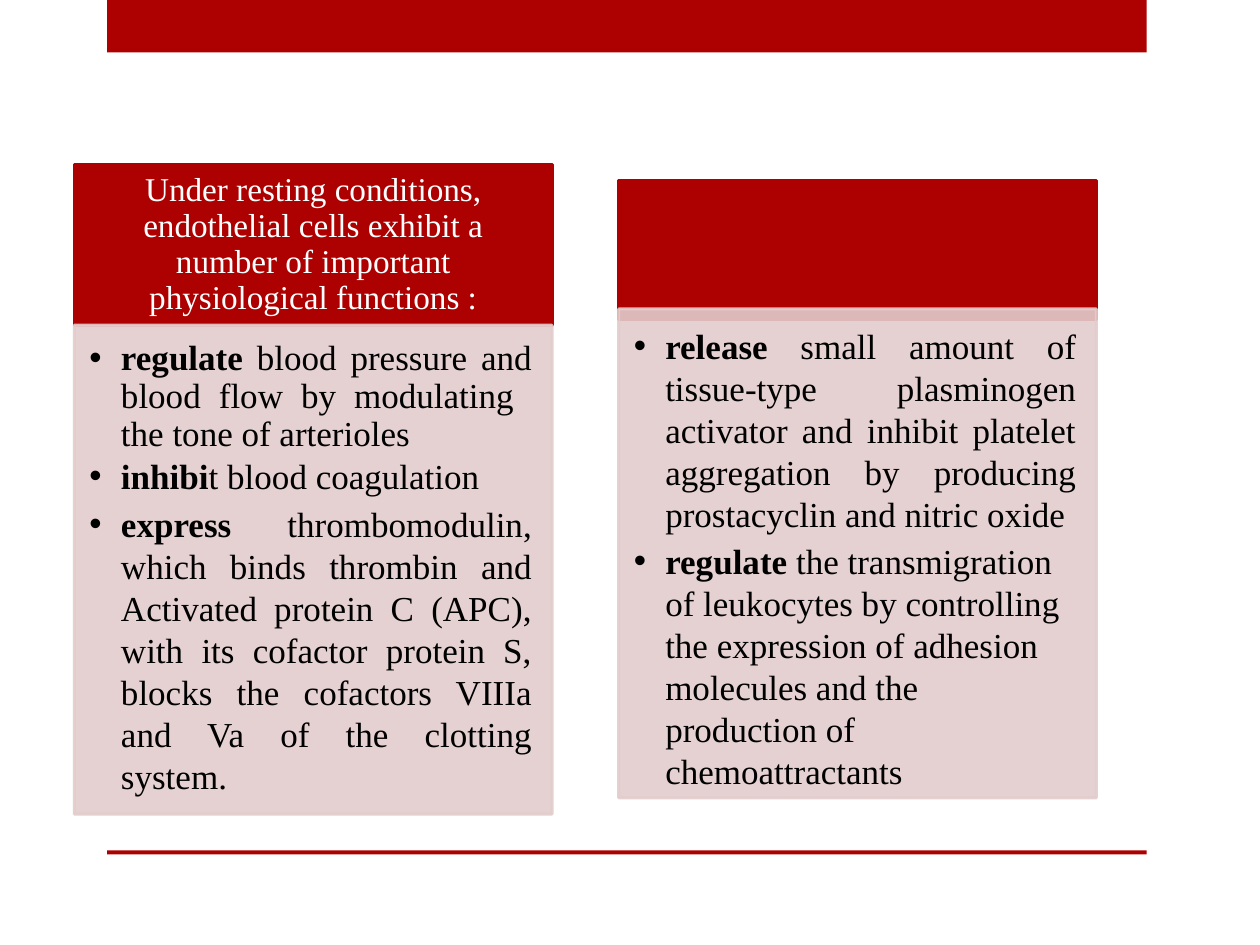
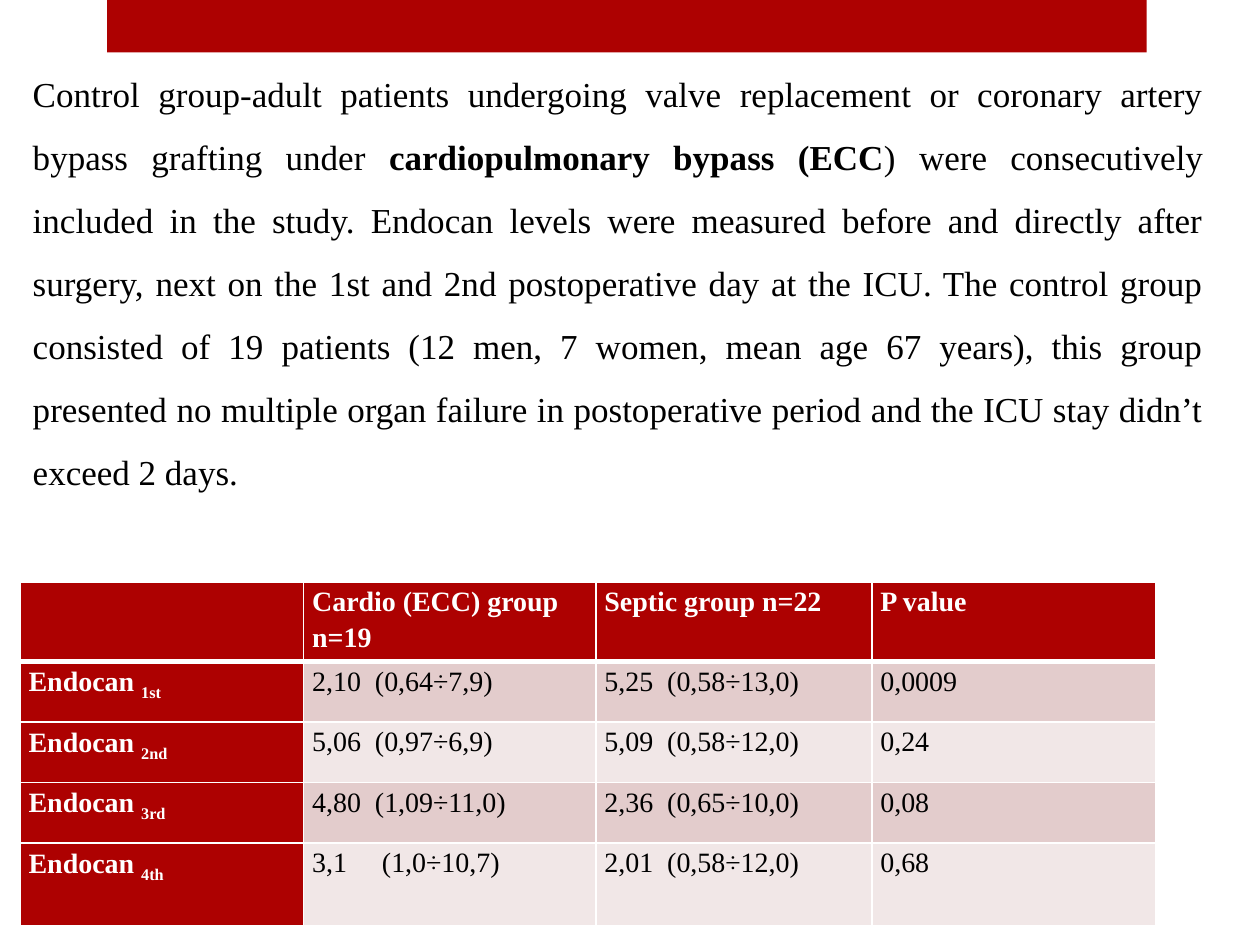
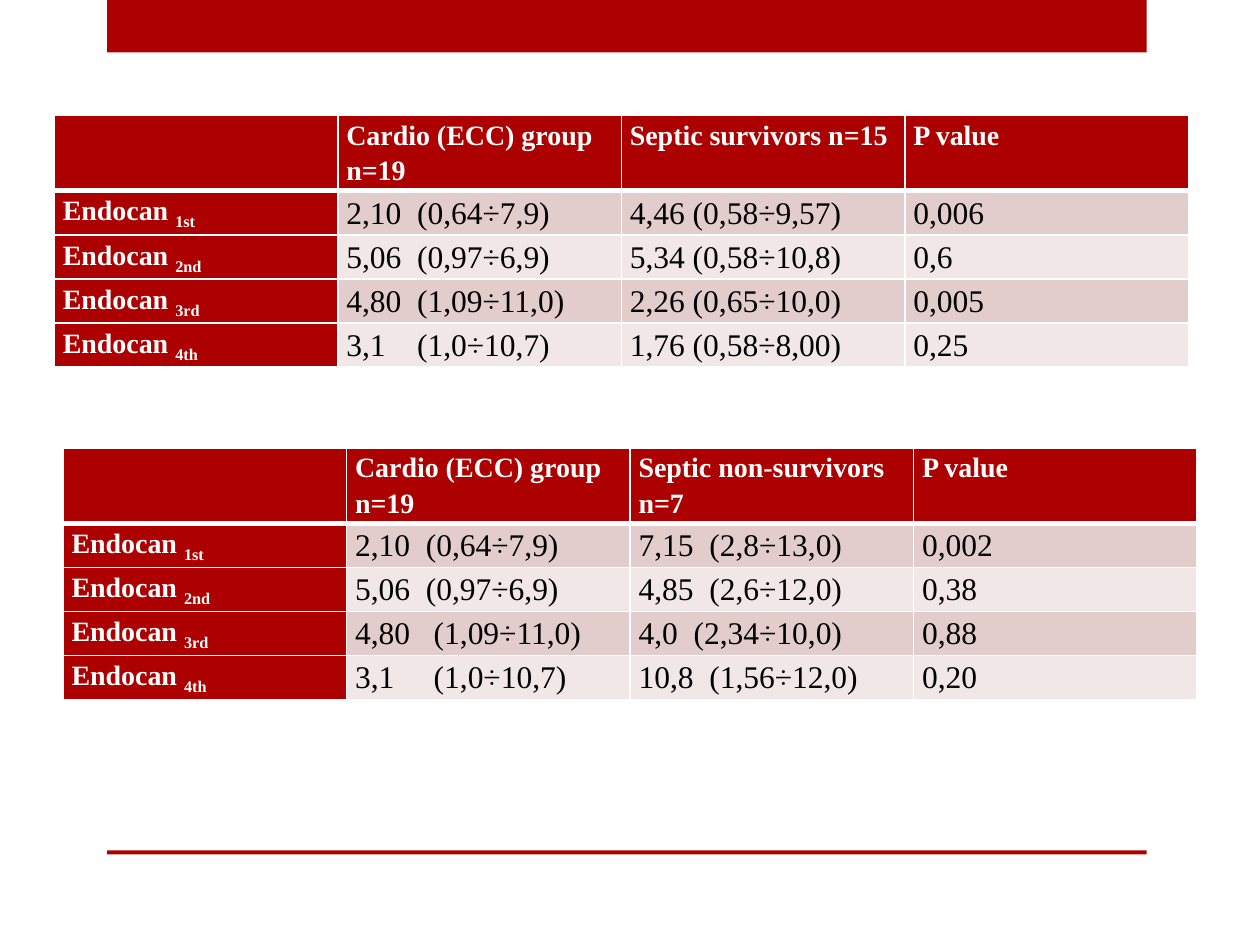
from dataclasses import dataclass

from lxml import etree
from pptx import Presentation
from pptx import util as u
from pptx.dml.color import RGBColor
from pptx.enum import shapes, text
from pptx.oxml import ns

Pt = u.Pt


@dataclass(frozen=True)
class Theme:
    font: str = "Times New Roman"
    red: str = "AD0101"
    pink: str = "E3CCCC"
    pale: str = "F1E7E7"
    white: str = "FFFFFF"
    black: str = "000000"
    body: float = 20
    heading: float = 19
    value: float = 18
    label: float = 16


def add_xml(parent, tag, **attributes):
    return etree.SubElement(parent, ns.qn(tag), attributes)


class Slides:
    def __init__(self, theme):
        self.theme = theme
        self.deck = Presentation()
        self.deck.slide_width, self.deck.slide_height = Pt(720), Pt(540)
        self.page = None

    def new_page(self, layout):
        self.page = self.deck.slides.add_slide(self.deck.slide_layouts.get_by_name(layout))
        title = self.page.shapes.title
        if title is not None:
            title.element.getparent().remove(title.element)
        self.block(61.2, 0, 594, 30)
        self.block(61.2, 486, 594, 2.2)

    def block(self, left, top, width, height, outlined=False):
        box = self.page.shapes.add_shape(
            shapes.MSO_SHAPE.RECTANGLE, Pt(left), Pt(top), Pt(width), Pt(height))
        box.shadow.inherit = False
        self.paint(box.fill, self.theme.red)
        if outlined:
            self.paint(box.line.fill, self.theme.red)
            box.line.width = Pt(1.75)
        else:
            box.line.fill.background()
        return box

    def paint(self, fill, color, opacity=100):
        fill.solid()
        fill.fore_color.rgb = RGBColor.from_string(color)
        if opacity < 100:
            tint = fill._xPr.find(ns.qn("a:solidFill")).find(ns.qn("a:srgbClr"))
            add_xml(tint, "a:alpha", val=str(opacity * 1000))

    def fill_para(self, para, spans, size, color, spacing=1.0, after=0):
        para.line_spacing = spacing
        para.space_before, para.space_after = Pt(0), Pt(after)
        para.font.name, para.font.size = self.theme.font, Pt(size)
        para.font.color.rgb = RGBColor.from_string(color)
        for words, bold in spans:
            span = para.add_run()
            span.text = words
            span.font.bold = bold

    def heading(self, box, words):
        frame = box.text_frame
        frame.word_wrap = True
        frame.vertical_anchor = text.MSO_ANCHOR.MIDDLE
        frame.margin_left = frame.margin_right = Pt(10.8)
        para = frame.paragraphs[0]
        para.alignment = text.PP_ALIGN.CENTER
        self.fill_para(para, [(words, False)], self.theme.heading, self.theme.white, 0.9)

    def body(self, index, place, margins, items, bulleted):
        box = self.page.placeholders[index]
        box.left, box.top, box.width, box.height = map(Pt, place)
        box.element.getparent().append(box.element)
        frame = box.text_frame
        frame.word_wrap = True
        frame.auto_size = text.MSO_AUTO_SIZE.NONE
        frame.vertical_anchor = text.MSO_ANCHOR.TOP
        (frame.margin_left, frame.margin_top,
         frame.margin_right, frame.margin_bottom) = map(Pt, margins)
        for number, (spans, spacing, alignment) in enumerate(items):
            para = frame.add_paragraph() if number else frame.paragraphs[0]
            indent = Pt(18) if bulleted else 0
            properties = para._p.get_or_add_pPr()
            properties.set("marL", str(indent))
            properties.set("indent", str(-indent))
            if bulleted:
                add_xml(properties, "a:buChar", char="•")
            else:
                add_xml(properties, "a:buNone")
            para.alignment = alignment
            self.fill_para(para, spans, self.theme.body, self.theme.black,
                           spacing, 3 if bulleted else 0)
        return box

    def panel(self, index, left, top, items):
        box = self.body(index, (left, top, 273, 279.4), (8.64, 8.64, 11.52, 12.24), items, True)
        self.paint(box.fill, self.theme.pink, 90)
        self.paint(box.line.fill, self.theme.pink, 90)
        box.line.width = Pt(1.75)

    def cell(self, cell, words, row, column, size):
        theme = self.theme
        cell.margin_left = cell.margin_right = Pt(4.9)
        cell.margin_top = cell.margin_bottom = 0
        properties = cell._tc.get_or_add_tcPr()
        thick = {0: "B", 1: "T"}.get(row)
        for side in "LRTB":
            width = Pt(3 if side == thick else 1)
            edge = add_xml(properties, f"a:ln{side}", w=str(width))
            add_xml(add_xml(edge, "a:solidFill"), "a:srgbClr", val=theme.white)
        is_header = row == 0 or column == 0
        band = theme.pink if row % 2 else theme.pale
        self.paint(cell.fill, theme.red if is_header else band)
        para = cell.text_frame.paragraphs[0]
        color = theme.white if is_header else theme.black
        spans = [(part, is_header) for part in words if part]
        self.fill_para(para, spans, theme.label if is_header else size, color, 1.15)
        for span in para.runs[1:]:
            span.font._element.set("baseline", "-25000")

    def table(self, left, top, widths, heights, group, values, size):
        rows = [[("",), ("Cardio (ECC) group n=19",), (group,), ("P value",)]]
        for ordinal, record in zip(("1st", "2nd", "3rd", "4th"), values):
            rows.append([("Endocan ", ordinal)] + [(value,) for value in record])
        grid = self.page.shapes.add_table(
            len(rows), len(widths), Pt(left), Pt(top), Pt(sum(widths)), Pt(sum(heights))).table
        grid.horz_banding = grid.first_row = False
        for column, width in zip(grid.columns, widths):
            column.width = Pt(width)
        for row, height in zip(grid.rows, heights):
            row.height = Pt(height)
        for row, record in enumerate(rows):
            for column, words in enumerate(record):
                self.cell(grid.cell(row, column), words, row, column, size)


def functions_page(slides):
    justify, left = text.PP_ALIGN.JUSTIFY, text.PP_ALIGN.LEFT
    slides.new_page("Two Content")
    header = slides.block(42.5, 94.2, 273, 91.6, outlined=True)
    slides.heading(header, "Under resting conditions, endothelial cells exhibit a number of "
                           "important physiological functions :")
    slides.panel(1, 42.5, 185.8, [
        ([("regulate", True),
          (" blood pressure and blood flow by modulating  the tone of arterioles", False)],
         0.9, justify),
        ([("inhibi", True), ("t blood coagulation", False)], 0.9, justify),
        ([("express ", True),
          ("thrombomodulin, which binds thrombin and Activated protein C (APC), with its "
           "cofactor protein S, blocks the cofactors VIIIa and Va of the clotting system.",
           False)], 1.0, justify)])
    slides.block(353.5, 103, 273, 79.5, outlined=True)
    slides.panel(2, 353.5, 176.5, [
        ([("release", True),
          (" small amount of tissue-type plasminogen activator and inhibit platelet "
           "aggregation by producing prostacyclin and nitric oxide", False)], 1.0, justify),
        ([("regulate", True),
          (" the transmigration of leukocytes by controlling the expression of adhesion "
           "molecules and the production of chemoattractants", False)], 1.0, left)])


def control_page(slides):
    slides.new_page("Title and Content")
    slides.table(11.5, 332.6, (162, 167, 157.7, 162), (45.5, 34.5, 34.5, 34.5, 47.5),
                 "Septic group n=22", [
                     ("2,10  (0,64÷7,9)", "5,25  (0,58÷13,0)", "0,0009"),
                     ("5,06  (0,97÷6,9)", "5,09  (0,58÷12,0)", "0,24"),
                     ("4,80  (1,09÷11,0)", "2,36  (0,65÷10,0)", "0,08"),
                     ("3,1     (1,0÷10,7)", "2,01  (0,58÷12,0)", "0,68")],
                 slides.theme.label)
    spans = [
        ("Control group-adult patients undergoing valve replacement or coronary artery bypass "
         "grafting under ", False),
        ("cardiopulmonary bypass (ECC", True),
        (") were consecutively included in the study. Endocan levels were measured before and "
         "directly after surgery, next on the 1st and 2nd postoperative day at the ICU. The "
         "control group consisted of 19 patients (12 men, 7 women, mean age 67 years), this "
         "group presented no multiple organ failure in postoperative period and the ICU stay "
         "didn’t exceed 2 days.", False)]
    slides.body(1, (11.5, 26, 683.3, 285.8), (7.2, 3.6, 7.2, 3.6),
                [(spans, 1.5, text.PP_ALIGN.JUSTIFY)], False)


def survival_page(slides):
    slides.new_page("Blank")
    widths, heights = [162] * 4, [43] + [25.2] * 4
    slides.table(31, 66, widths, heights, "Septic survivors n=15", [
        ("2,10  (0,64÷7,9)", "4,46 (0,58÷9,57)", "0,006"),
        ("5,06  (0,97÷6,9)", "5,34 (0,58÷10,8)", "0,6"),
        ("4,80  (1,09÷11,0)", "2,26 (0,65÷10,0)", "0,005"),
        ("3,1    (1,0÷10,7)", "1,76 (0,58÷8,00)", "0,25")], slides.theme.value)
    slides.table(36, 256, widths, heights, "Septic non-survivors n=7", [
        ("2,10  (0,64÷7,9)", "7,15  (2,8÷13,0)", "0,002"),
        ("5,06  (0,97÷6,9)", "4,85  (2,6÷12,0)", "0,38"),
        ("4,80   (1,09÷11,0)", "4,0  (2,34÷10,0)", "0,88"),
        ("3,1     (1,0÷10,7)", "10,8  (1,56÷12,0)", "0,20")], slides.theme.value)


def main():
    slides = Slides(Theme())
    functions_page(slides)
    control_page(slides)
    survival_page(slides)
    slides.deck.save("out.pptx")


if __name__ == "__main__":
    main()
